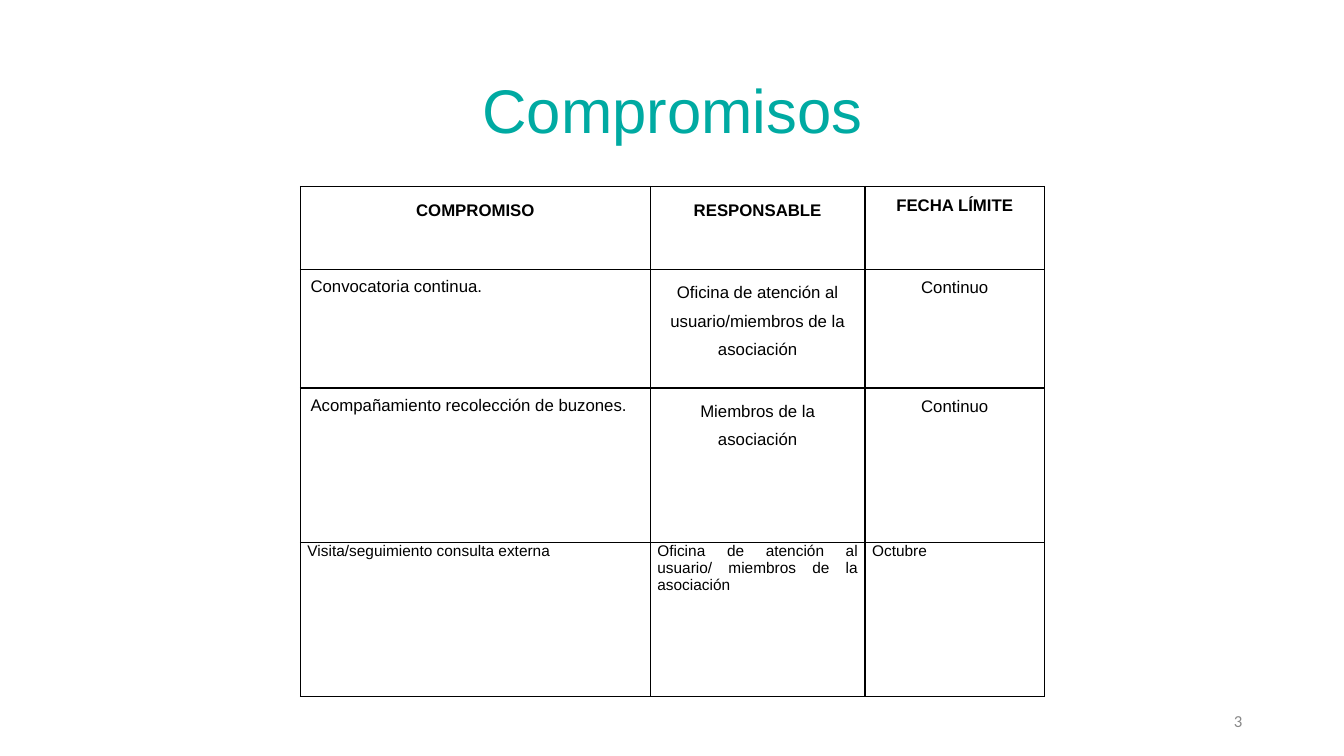
import dataclasses

import pptx
import pptx.dml.color
import pptx.enum.text
import pptx.oxml
import pptx.oxml.ns
import pptx.util

Inches = pptx.util.Inches
Align = pptx.enum.text.PP_ALIGN
Anchor = pptx.enum.text.MSO_ANCHOR


@dataclasses.dataclass
class Theme:
    title_color: str = "00AAA2"
    ink: str = "000000"
    number_color: str = "888888"
    font: str = "Arial"
    number_font: str = "Calibri"
    title_size: int = 44
    cell_size: int = 12
    last_row_size: int = 11
    number_size: int = 12


theme = Theme()


def format_text(para, font, size, color, align, spacing=1.0, bold=False):
    para.alignment = align
    para.line_spacing = spacing
    para.font.name = font
    para.font.size = pptx.util.Pt(size)
    para.font.bold = bold
    para.font.color.rgb = pptx.dml.color.RGBColor.from_string(color)


def add_borders(cell, color, width):
    properties = cell._tc.get_or_add_tcPr()
    for position, side in enumerate(("lnL", "lnR", "lnT", "lnB")):
        properties.insert(position, pptx.oxml.parse_xml(
            f'<a:{side} {pptx.oxml.ns.nsdecls("a")} w="{pptx.util.Pt(width)}">'
            f'<a:solidFill><a:srgbClr val="{color}"/></a:solidFill></a:{side}>'))


deck = pptx.Presentation()
deck.slide_width, deck.slide_height = Inches(13.33), Inches(7.5)
page = deck.slides.add_slide(deck.slide_layouts[5])

# Title
title = page.shapes.title
title.left, title.top = Inches(0.92), Inches(0.4)
title.width, title.height = Inches(11.5), Inches(1.45)
title.text_frame.text = "Compromisos"
title.text_frame.vertical_anchor = Anchor.MIDDLE
title.text_frame.auto_size = pptx.enum.text.MSO_AUTO_SIZE.NONE
format_text(title.text_frame.paragraphs[0], theme.font, theme.title_size,
            theme.title_color, Align.CENTER, 0.9)

# Commitments table
commitments = [
    ("COMPROMISO", "RESPONSABLE", "FECHA LÍMITE"),
    ("Convocatoria continua.",
     "Oficina de atención al usuario/miembros de la asociación", "Continuo"),
    ("Acompañamiento recolección de buzones.",
     "Miembros de la asociación", "Continuo"),
    ("Visita/seguimiento consulta externa",
     "Oficina de atención al usuario/ miembros de la asociación", "Octubre"),
]
column_widths = (3.47, 2.13, 1.78)
row_heights = (0.82, 1.18, 1.53, 1.53)
last_row, date_column = len(row_heights) - 1, len(column_widths) - 1

table = page.shapes.add_table(
    len(row_heights), len(column_widths), Inches(2.98), Inches(1.85),
    Inches(sum(column_widths)), Inches(sum(row_heights))).table
table.first_row = table.horz_banding = False
for column, width in zip(table.columns, column_widths):
    column.width = Inches(width)
for row, height in zip(table.rows, row_heights):
    row.height = Inches(height)

for r, texts in enumerate(commitments):
    for c, text in enumerate(texts):
        cell = table.cell(r, c)
        cell.text = text
        cell.fill.background()
        add_borders(cell, theme.ink, 1)

        # The last row is tight and justified; dates have no margins
        size, align, spacing = theme.cell_size, Align.CENTER, 1.5
        side_margin, end_margin = 0.1, 0.05
        if r == last_row:
            size, align, spacing = theme.last_row_size, Align.JUSTIFY, 1.0
            side_margin, end_margin = 0.07, 0
        elif c == date_column:
            side_margin = end_margin = 0
        elif c == 0 and r > 0:
            align, spacing = Align.LEFT, 1.15
        cell.margin_left = cell.margin_right = Inches(side_margin)
        cell.margin_top = cell.margin_bottom = Inches(end_margin)
        format_text(cell.text_frame.paragraphs[0], theme.font, size,
                    theme.ink, align, spacing, bold=r == 0)

# Page number
number = page.shapes.add_textbox(
    Inches(9.42), Inches(6.95), Inches(3), Inches(0.4)).text_frame
number.word_wrap = True
number.vertical_anchor = Anchor.MIDDLE
number.text = "3"
format_text(number.paragraphs[0], theme.number_font, theme.number_size,
            theme.number_color, Align.RIGHT)

deck.save("out.pptx")
